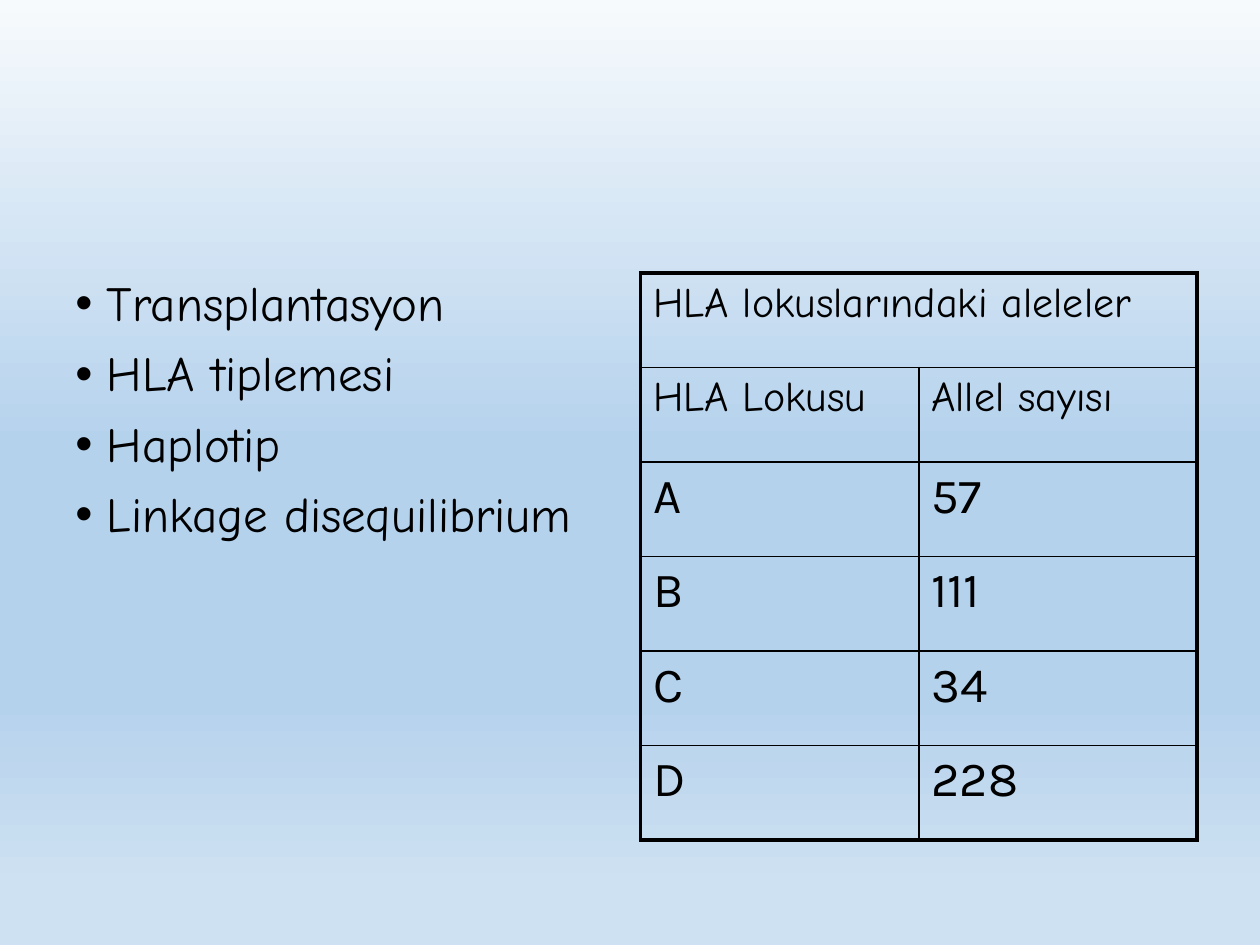
from lxml.etree import SubElement
from pptx import Presentation
from pptx.dml.color import RGBColor
from pptx.oxml.ns import qn
from pptx.util import Pt

BLACK = "000000"
HEADING_FONT = "Comic Neue"
VALUE_FONT = "Karla"
BACKGROUND_STOPS = [(0, "F7FAFD"), (47, "B5D2EC"), (74, "B5D2EC"), (94, "CEE1F2")]
TOPICS = ["Transplantasyon", "HLA tiplemesi", "Haplotip", "Linkage disequilibrium"]
ALLELE_ROWS = [
    ("HLA lokuslarındaki aleleler", ""),
    ("HLA Lokusu", "Allel sayısı"),
    ("A", "57"),
    ("B", "111"),
    ("C", "34"),
    ("D", "228"),
]


def color(hex_value):
    """Return the colour for a hex string."""
    return RGBColor.from_string(hex_value)


def style_paragraph(para, font_name, size):
    """Give every run of a paragraph its font, size and colour."""
    for span in para.runs:
        span.font.name = font_name
        span.font.size = Pt(size)
        span.font.color.rgb = color(BLACK)


def paint_background(slide):
    """Fill the slide with a vertical gradient."""
    fill = slide.background.fill
    fill.gradient()
    fill.gradient_angle = 270
    stop_list = next(slide.background._cSld.iter(qn("a:gsLst")))
    for stop in list(stop_list):
        stop_list.remove(stop)
    for position, hex_value in BACKGROUND_STOPS:
        stop = SubElement(stop_list, qn("a:gs"), pos=str(position * 1000))
        SubElement(stop, qn("a:srgbClr"), val=hex_value)


def add_bullet(para):
    """Hang a round bullet in front of a paragraph."""
    properties = para._p.get_or_add_pPr()
    properties.set("marL", str(Pt(18)))
    properties.set("indent", str(-Pt(18)))
    SubElement(properties, qn("a:buFont"), typeface="Arial")
    SubElement(properties, qn("a:buChar"), char="•")


def add_topics(slide, left, top, width, height):
    """Place the bulleted topics in the given box."""
    box = slide.shapes.add_textbox(Pt(left), Pt(top), Pt(width), Pt(height))
    frame = box.text_frame
    frame.word_wrap = True
    frame.text = "\n".join(TOPICS)
    for para in frame.paragraphs:
        para.line_spacing = 0.9
        para.space_before = Pt(10)
        add_bullet(para)
        style_paragraph(para, HEADING_FONT, 28)


def add_borders(cell, widths):
    """Draw the cell borders from a map of side to line width."""
    properties = cell._tc.get_or_add_tcPr()
    for side, width in widths.items():
        line = SubElement(properties, qn(f"a:ln{side}"), w=str(Pt(width)))
        fill = SubElement(line, qn("a:solidFill"))
        SubElement(fill, qn("a:srgbClr"), val=BLACK)


def add_allele_table(slide, left, top, width, height):
    """Place the table of allele counts in the given box."""
    row_count, column_count = len(ALLELE_ROWS), len(ALLELE_ROWS[0])
    table = slide.shapes.add_table(
        row_count, column_count, Pt(left), Pt(top), Pt(width), Pt(height)
    ).table
    table.first_row = False
    table.horz_banding = False
    table.cell(0, 0).merge(table.cell(0, column_count - 1))
    for row, texts in enumerate(ALLELE_ROWS):
        font_name, size = (HEADING_FONT, 24) if row < 2 else (VALUE_FONT, 28)
        for column, text in enumerate(texts):
            cell = table.cell(row, column)
            outer_sides = {
                "L": column == 0,
                "R": column == column_count - 1 or row == 0,
                "T": row == 0,
                "B": row == row_count - 1,
            }
            add_borders(
                cell, {side: 2.25 if outer else 1 for side, outer in outer_sides.items()}
            )
            cell.fill.background()
            if text:
                cell.text_frame.text = text
                para = cell.text_frame.paragraphs[0]
                para.space_before = Pt(size * 0.2)
                style_paragraph(para, font_name, size)


def main():
    """Build the slide and save the deck."""
    deck = Presentation()
    deck.slide_width, deck.slide_height = Pt(720), Pt(540)
    slide = deck.slides.add_slide(deck.slide_layouts[6])
    paint_background(slide)
    margin, top, width, height = 36, 156, 318, 324
    add_topics(slide, margin, top, width, height)
    add_allele_table(slide, 720 - margin - width, top, width, height)
    deck.save("out.pptx")


if __name__ == "__main__":
    main()
